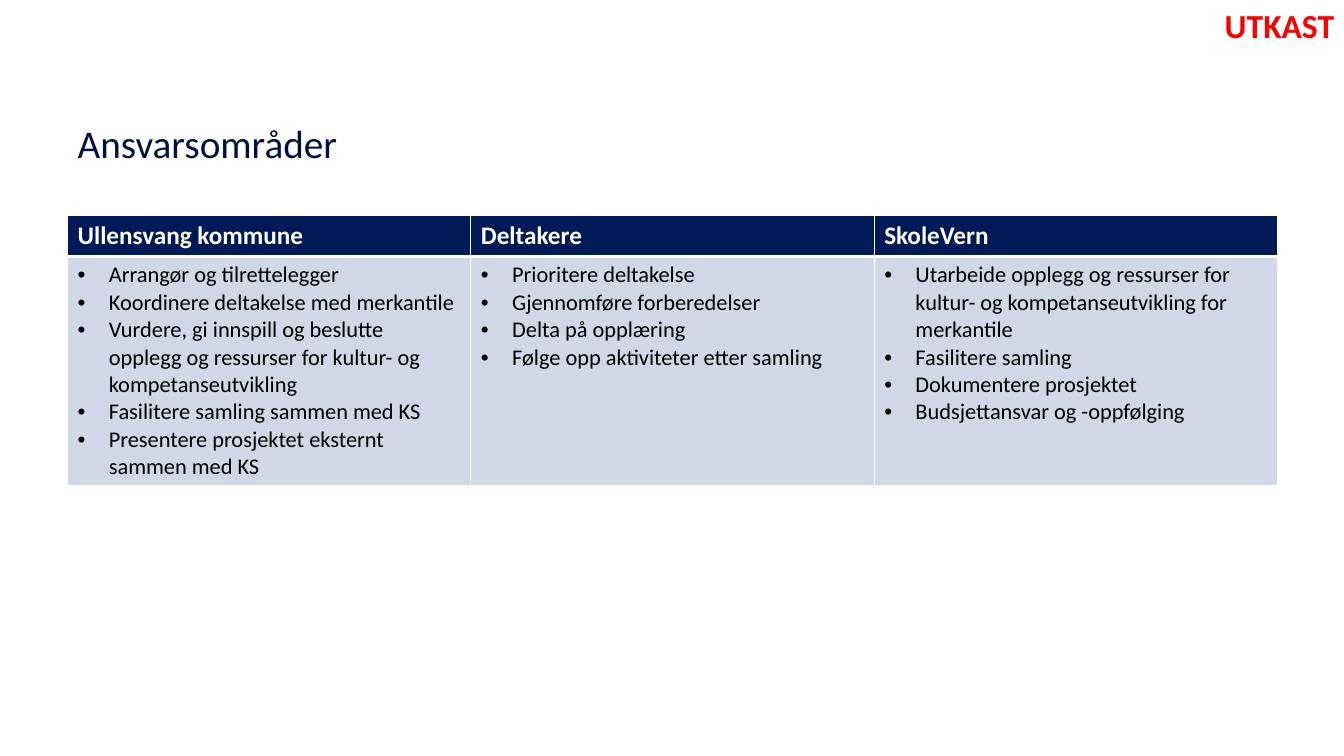
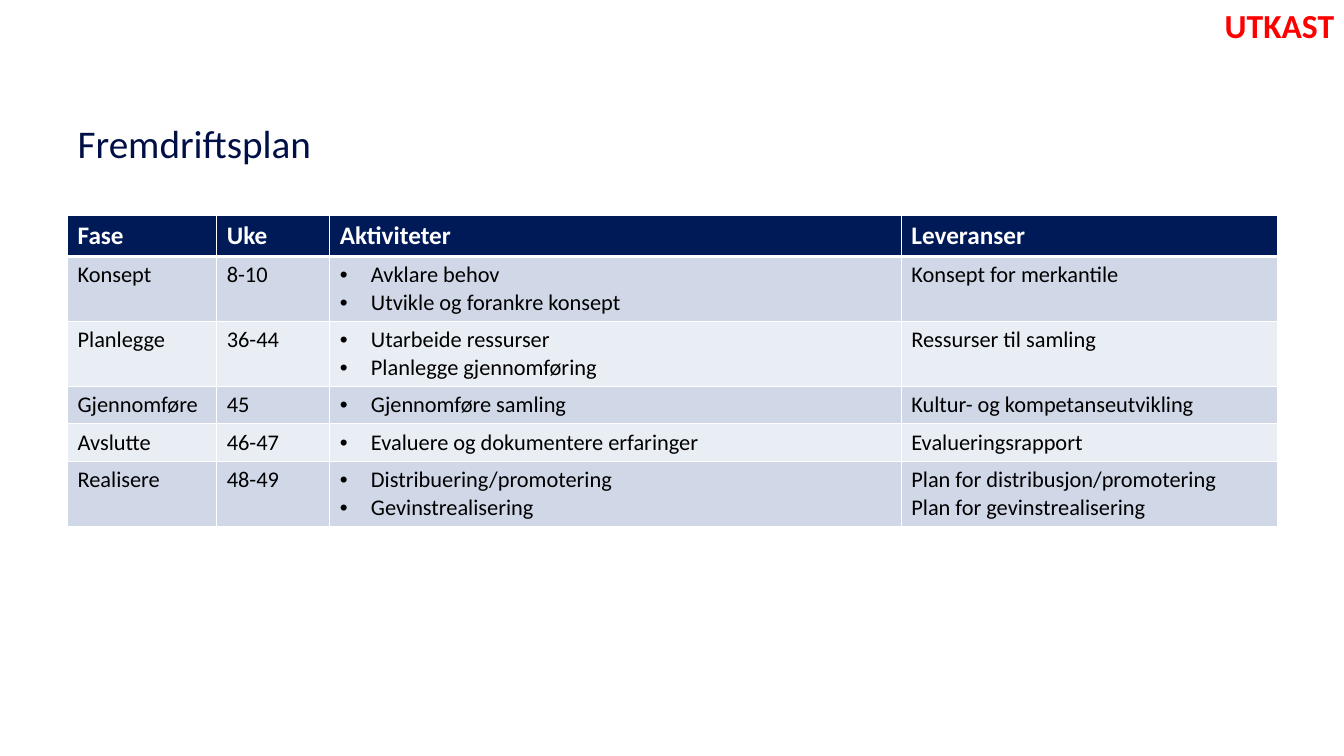
import pptx
import pptx.dml.color
import pptx.enum.text
import pptx.oxml
import pptx.oxml.ns
import pptx.util

Inches, Pt = pptx.util.Inches, pptx.util.Pt
PP_ALIGN = pptx.enum.text.PP_ALIGN
MSO_AUTO_SIZE = pptx.enum.text.MSO_AUTO_SIZE
MSO_ANCHOR = pptx.enum.text.MSO_ANCHOR

FONT = "Calibri"
COLORS = {
    "title": "001046",
    "header": "001A58",
    "band_dark": "D0D8E8",
    "band_light": "E9EDF4",
    "white": "FFFFFF",
    "text": "000000",
    "draft": "FF0000",
}
HEADER_HEIGHT = 0.4
LINE_HEIGHT = 0.27
CELL_PADDING = 0.1

# Each body row: number of text lines in its tallest cell, then the cells
SLIDES = [
    {
        "title": "Ansvarsområder",
        "widths": [4, 4, 4],
        "bulleted": {0, 1, 2},
        "header": ["Ullensvang kommune", "Deltakere", "SkoleVern"],
        "rows": [
            (8, [
                ["Arrangør og tilrettelegger",
                 "Koordinere deltakelse med merkantile",
                 "Vurdere, gi innspill og beslutte opplegg og ressurser "
                 "for kultur- og kompetanseutvikling",
                 "Fasilitere samling sammen med KS",
                 "Presentere prosjektet eksternt sammen med KS"],
                ["Prioritere deltakelse",
                 "Gjennomføre forberedelser",
                 "Delta på opplæring",
                 "Følge opp aktiviteter etter samling"],
                ["Utarbeide opplegg og ressurser for kultur- og "
                 "kompetanseutvikling for merkantile",
                 "Fasilitere samling",
                 "Dokumentere prosjektet",
                 "Budsjettansvar og -oppfølging"],
            ]),
        ],
    },
    {
        "title": "Fremdriftsplan",
        "widths": [1.48, 1.12, 5.67, 3.73],
        "bulleted": {2},
        "header": ["Fase", "Uke", "Aktiviteter", "Leveranser"],
        "rows": [
            (2, [["Konsept"], ["8-10"],
                 ["Avklare behov", "Utvikle og forankre konsept"],
                 ["Konsept for merkantile"]]),
            (2, [["Planlegge"], ["36-44"],
                 ["Utarbeide ressurser", "Planlegge gjennomføring"],
                 ["Ressurser til samling"]]),
            (1, [["Gjennomføre"], ["45"],
                 ["Gjennomføre samling"],
                 ["Kultur- og kompetanseutvikling"]]),
            (1, [["Avslutte"], ["46-47"],
                 ["Evaluere og dokumentere erfaringer"],
                 ["Evalueringsrapport"]]),
            (2, [["Realisere"], ["48-49"],
                 ["Distribuering/promotering", "Gevinstrealisering"],
                 ["Plan for distribusjon/promotering",
                  "Plan for gevinstrealisering"]]),
        ],
    },
]


def add_run(p, text, size, color, bold=False):
    r = p.add_run()
    r.text = text
    r.font.name = FONT
    r.font.size = Pt(size)
    r.font.bold = bold
    r.font.color.rgb = pptx.dml.color.RGBColor.from_string(COLORS[color])


def fill_cell(cell, texts, fill, size, color, header=False, bulleted=False):
    """Write one paragraph per text, then set white borders and the fill."""
    tf = cell.text_frame
    for i, text in enumerate(texts):
        p = tf.paragraphs[0] if i == 0 else tf.add_paragraph()
        if bulleted:
            pPr = p._p.get_or_add_pPr()
            pPr.set("marL", str(Inches(0.31)))
            pPr.set("indent", str(-Inches(0.31)))
            for tag, attr in (('buFont', 'typeface="Arial"'), ('buChar', 'char="•"')):
                pPr.append(pptx.oxml.parse_xml(
                    f'<a:{tag} {pptx.oxml.ns.nsdecls("a")} {attr}/>'))
        add_run(p, text, size, color, bold=header)

    tcPr = cell._tc.get_or_add_tcPr()
    for side in "LRTB":
        width = Pt(3 if header and side == "B" else 1)
        tcPr.append(pptx.oxml.parse_xml(
            f'<a:ln{side} {pptx.oxml.ns.nsdecls("a")} w="{width}"><a:solidFill>'
            f'<a:srgbClr val="{COLORS["white"]}"/></a:solidFill></a:ln{side}>'))
    cell.fill.solid()
    cell.fill.fore_color.rgb = pptx.dml.color.RGBColor.from_string(COLORS[fill])


prs = pptx.Presentation()
prs.slide_width, prs.slide_height = Inches(13.33), Inches(7.5)
title_only = prs.slide_layouts[5]

for content in SLIDES:
    s = prs.slides.add_slide(title_only)

    title = s.shapes.title
    title.left, title.top = Inches(0.67), Inches(0.8)
    title.width, title.height = Inches(12), Inches(1.24)
    tf = title.text_frame
    tf.auto_size = MSO_AUTO_SIZE.NONE
    tf.vertical_anchor = MSO_ANCHOR.MIDDLE
    p = tf.paragraphs[0]
    p.alignment = PP_ALIGN.LEFT
    add_run(p, content["title"], 28, "title")

    heights = [HEADER_HEIGHT] + [
        CELL_PADDING + LINE_HEIGHT * lines for lines, _ in content["rows"]]
    widths = content["widths"]
    table = s.shapes.add_table(
        len(heights), len(widths), Inches(0.67), Inches(2.14),
        Inches(sum(widths)), Inches(sum(heights))).table
    for column, width in zip(table.columns, widths):
        column.width = Inches(width)
    for row, height in zip(table.rows, heights):
        row.height = Inches(height)

    for col, text in enumerate(content["header"]):
        fill_cell(table.cell(0, col), [text], "header", 18, "white", header=True)
    for row, (_, cells) in enumerate(content["rows"], start=1):
        band = "band_dark" if row % 2 else "band_light"
        for col, texts in enumerate(cells):
            fill_cell(table.cell(row, col), texts, band, 16, "text",
                      bulleted=col in content["bulleted"])

    draft = s.shapes.add_textbox(Inches(12.04), 0, Inches(1.3), Inches(0.5))
    tf = draft.text_frame
    tf.word_wrap = False
    tf.auto_size = MSO_AUTO_SIZE.SHAPE_TO_FIT_TEXT
    p = tf.paragraphs[0]
    p.alignment = PP_ALIGN.CENTER
    add_run(p, "UTKAST", 24, "draft", bold=True)

prs.save("out.pptx")
